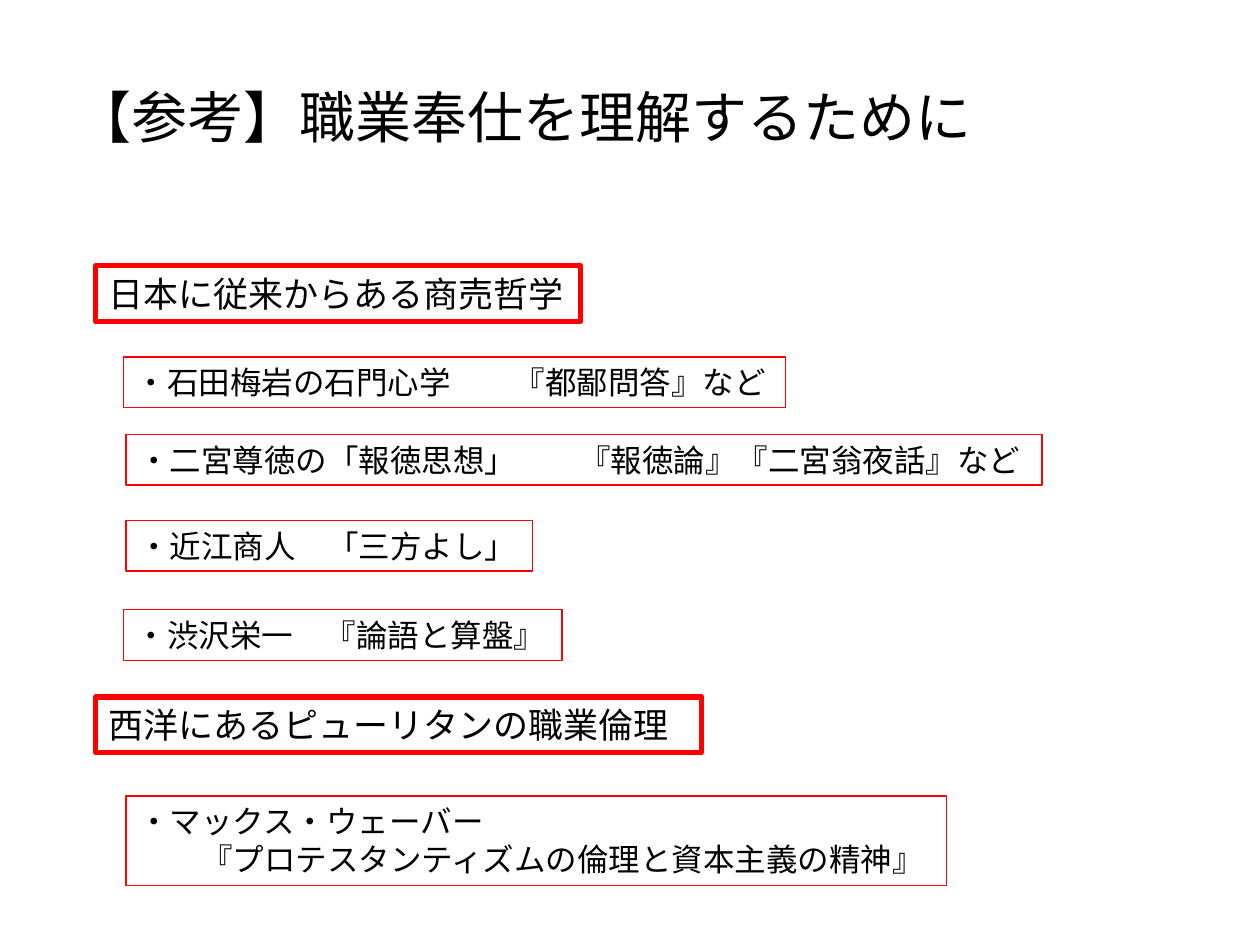
from dataclasses import dataclass

from lxml.etree import SubElement
from pptx import Presentation
from pptx.dml.color import RGBColor
from pptx.enum.shapes import MSO_SHAPE
from pptx.enum.text import MSO_ANCHOR, MSO_AUTO_SIZE, PP_ALIGN
from pptx.oxml.ns import qn
from pptx.util import Cm, Pt


@dataclass(frozen=True)
class Theme:
    font: str = "Noto Sans CJK JP"
    ink: RGBColor = RGBColor(0x00, 0x00, 0x00)
    frame: RGBColor = RGBColor(0xFF, 0x00, 0x00)
    title_size: int = 32
    heading_size: int = 20
    item_size: int = 18
    heading_border: float = 3
    item_border: float = 0.75


ITEM_EM = 0.635  # width in cm of one full-width character at the item size


class SlideBuilder:
    def __init__(self, slide, theme):
        self.slide = slide
        self.theme = theme

    def add_run(self, paragraph, text, size):
        run = paragraph.add_run()
        run.text = text
        run.font.size = Pt(size)
        run.font.name = self.theme.font
        run.font.color.rgb = self.theme.ink
        east_asian = SubElement(run.font._element, qn("a:ea"))
        east_asian.set("typeface", self.theme.font)

    def title(self, text):
        title = self.slide.shapes.title
        title.left, title.top = Cm(1.27), Cm(0.76)
        title.width, title.height = Cm(22.86), Cm(3.18)
        title.text_frame.vertical_anchor = MSO_ANCHOR.MIDDLE
        paragraph = title.text_frame.paragraphs[0]
        paragraph.alignment = PP_ALIGN.LEFT
        self.add_run(paragraph, text, self.theme.title_size)

    def box(self, place, lines, size, border):
        """Draw a framed text; each line is (text, indent, tab stop) in characters."""
        box = self.slide.shapes.add_shape(
            MSO_SHAPE.RECTANGLE, *(Cm(length) for length in place))
        box.shadow.inherit = False
        box.fill.background()
        box.line.color.rgb = self.theme.frame
        box.line.width = Pt(border)
        frame = box.text_frame
        frame.word_wrap = True
        frame.auto_size = MSO_AUTO_SIZE.SHAPE_TO_FIT_TEXT
        frame.vertical_anchor = MSO_ANCHOR.TOP
        for number, (text, indent, tab_stop) in enumerate(lines):
            paragraph = frame.add_paragraph() if number else frame.paragraphs[0]
            paragraph.alignment = PP_ALIGN.LEFT
            properties = paragraph._p.get_or_add_pPr()
            if indent:
                properties.set("marL", str(Cm(indent * ITEM_EM)))
            if tab_stop:
                tabs = SubElement(properties, qn("a:tabLst"))
                SubElement(tabs, qn("a:tab"),
                           pos=str(Cm(tab_stop * ITEM_EM)), algn="l")
            self.add_run(paragraph, text, size)

    def heading(self, top, width, text):
        self.box((1.93, top, width, 1.12), [(text, 0, 0)],
                 self.theme.heading_size, self.theme.heading_border)

    def item(self, left, top, width, *lines):
        height = 0.24 + 0.78 * len(lines)
        self.box((left, top, width, height), lines,
                 self.theme.item_size, self.theme.item_border)


def main():
    deck = Presentation()
    deck.slide_width, deck.slide_height = Cm(25.4), Cm(19.05)
    page = SlideBuilder(deck.slides.add_slide(deck.slide_layouts[5]), Theme())

    page.title("【参考】職業奉仕を理解するために")

    page.heading(5.36, 9.78, "日本に従来からある商売哲学")
    page.item(2.49, 7.2, 13.34, ("・石田梅岩の石門心学\t『都鄙問答』など", 0, 12))
    page.item(2.54, 8.76, 18.47,
              ("・二宮尊徳の「報徳思想」\t『報徳論』『二宮翁夜話』など", 0, 14))
    page.item(2.54, 10.49, 8.2, ("・近江商人　「三方よし」", 0, 0))
    page.item(2.49, 12.29, 8.84, ("・渋沢栄一　『論語と算盤』", 0, 0))

    page.heading(14.05, 12.22, "西洋にあるピューリタンの職業倫理")
    page.item(2.54, 16.05, 16.54,
              ("・マックス・ウェーバー", 0, 0),
              ("『プロテスタンティズムの倫理と資本主義の精神』", 2, 0))

    deck.save("out.pptx")


if __name__ == "__main__":
    main()
